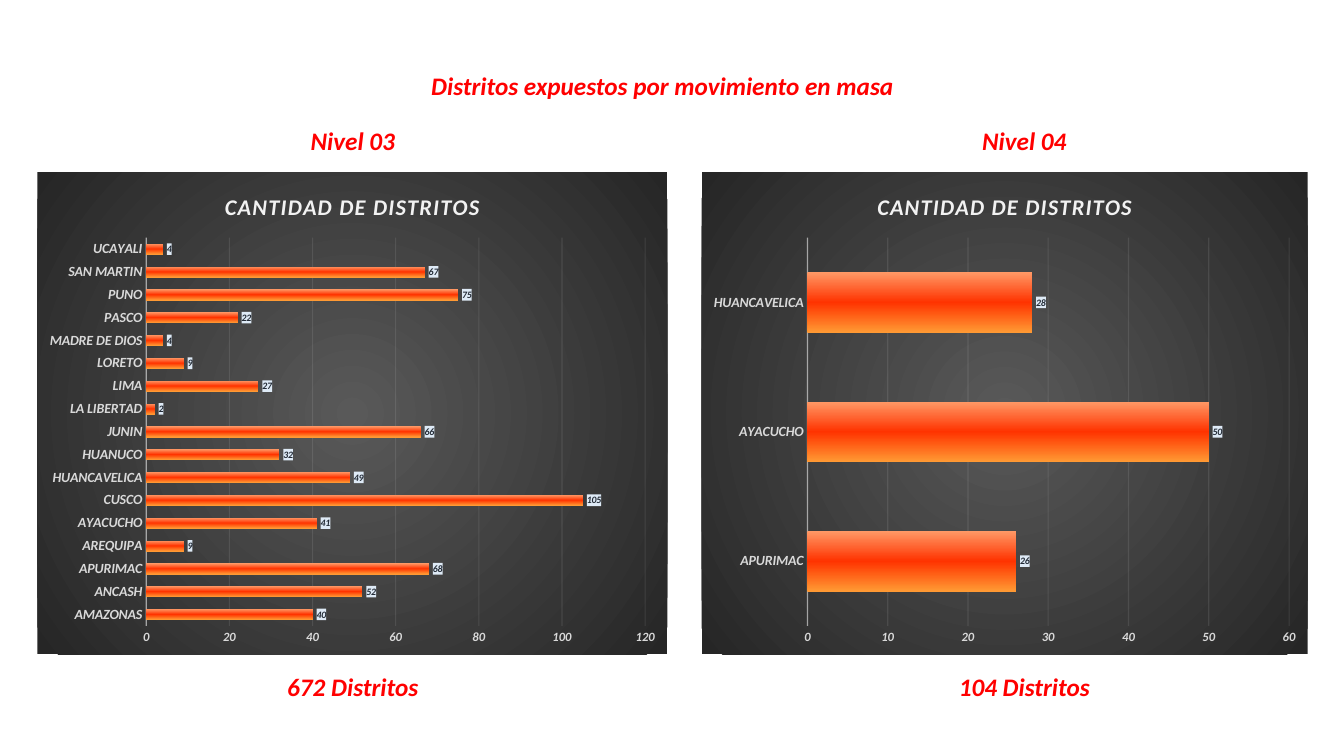
from dataclasses import dataclass

from lxml import etree
from pptx import Presentation
from pptx.chart.data import CategoryChartData
from pptx.dml.color import RGBColor
from pptx.enum.chart import XL_CHART_TYPE as ChartType, XL_LABEL_POSITION as LabelPosition
from pptx.enum.chart import XL_TICK_MARK as TickMark
from pptx.enum.text import MSO_ANCHOR as Anchor, MSO_AUTO_SIZE as AutoSize, PP_ALIGN as Align
from pptx.oxml import parse_xml
from pptx.oxml.ns import nsdecls, qn
from pptx.util import Inches, Pt


@dataclass(frozen=True)
class Theme:
    font: str = "Calibri"
    red: str = "FF0000"
    title: str = "F2F2F2"
    axis: str = "D9D9D9"
    label: str = "222A35"
    label_fill: str = "DEEAF6"
    backdrop: tuple = ((0, "595959"), (100, "262626"))
    bar: tuple = ((0, "FF9966"), (50, "FF3300"), (100, "FF9933"))
    heading_size: int = 18
    title_size: int = 16
    category_size: int = 10
    value_size: int = 9
    label_size: int = 7


theme = Theme()


def style(font, size, color):
    font.name, font.size = theme.font, Pt(size)
    font.bold = font.italic = True
    font.color.rgb = RGBColor.from_string(color)


def gradient(stops, direction):
    marks = "".join(
        f'<a:gs pos="{pos * 1000}"><a:srgbClr val="{color}"/></a:gs>' for pos, color in stops
    )
    return f'<a:gradFill rotWithShape="1"><a:gsLst>{marks}</a:gsLst>{direction}</a:gradFill>'


radial = (
    '<a:path path="circle"><a:fillToRect l="50000" t="50000" r="50000" b="50000"/></a:path>'
)
levels = [
    ("Nivel 03", "672 Distritos", 0.37, 6.25, 3.5, {
        "AMAZONAS": 40, "ANCASH": 52, "APURIMAC": 68, "AREQUIPA": 9, "AYACUCHO": 41,
        "CUSCO": 105, "HUANCAVELICA": 49, "HUANUCO": 32, "JUNIN": 66, "LA LIBERTAD": 2,
        "LIMA": 27, "LORETO": 9, "MADRE DE DIOS": 4, "PASCO": 22, "PUNO": 75,
        "SAN MARTIN": 67, "UCAYALI": 4,
    }),
    ("Nivel 04", "104 Distritos", 6.96, 6.01, 10.16, {
        "APURIMAC": 26, "AYACUCHO": 50, "HUANCAVELICA": 28,
    }),
]

deck = Presentation()
deck.slide_width, deck.slide_height = Inches(13.33), Inches(7.5)
slide = deck.slides.add_slide(deck.slide_layouts[5])

heading = slide.shapes.title
heading.left, heading.top = Inches(4.15), Inches(0.65)
heading.width, heading.height = Inches(4.84), Inches(0.4)
captions = [(heading, "Distritos expuestos por movimiento en masa")]

for level, total, left, width, center, districts in levels:
    for wording, top, span in ((level, 1.19, 1.06), (total, 6.61, 1.67)):
        caption = slide.shapes.add_textbox(
            Inches(center - span / 2), Inches(top), Inches(span), Inches(0.4)
        )
        captions.append((caption, wording))

    counts = CategoryChartData(number_format="#,##0")
    counts.categories = list(districts)
    counts.add_series("CANTIDAD DE DISTRITOS", list(districts.values()))
    chart = slide.shapes.add_chart(
        ChartType.BAR_CLUSTERED, Inches(left), Inches(1.71), Inches(width), Inches(4.78), counts
    ).chart
    chart.has_legend = False
    style(chart.font, theme.category_size, "000000")
    chart.element.find(qn("c:chart")).addnext(parse_xml(
        f'<c:spPr {nsdecls("c", "a")}>{gradient(theme.backdrop, radial)}'
        "<a:ln><a:noFill/></a:ln></c:spPr>"
    ))

    chart.has_title = True
    chart.chart_title.include_in_layout = False
    chart_title = chart.chart_title.text_frame
    chart_title.text = "CANTIDAD DE DISTRITOS"
    title_font = chart_title.paragraphs[0].runs[0].font
    style(title_font, theme.title_size, theme.title)
    title_font._element.set("spc", "100")

    category_axis, value_axis = chart.category_axis, chart.value_axis
    for axis, size in ((category_axis, theme.category_size), (value_axis, theme.value_size)):
        axis.major_tick_mark = axis.minor_tick_mark = TickMark.NONE
        style(axis.tick_labels.font, size, theme.axis)
    value_axis.minimum_scale = 0
    value_axis.tick_labels.number_format = "#,##0"
    value_axis.tick_labels.number_format_is_linked = False
    value_axis.format.line.fill.background()
    for line, weight, opacity in (
        (category_axis.format.line, 1, 54),
        (value_axis.major_gridlines.format.line, 0.75, 10),
    ):
        line.width = Pt(weight)
        line.color.rgb = RGBColor.from_string(theme.title)
        tint = next(line._get_or_add_ln().iter(qn("a:srgbClr")))
        etree.SubElement(tint, qn("a:alpha")).set("val", str(opacity * 1000))

    plot = chart.plots[0]
    plot.gap_width, plot.overlap = 115, -20
    plot.vary_by_categories = False
    bars = plot.series[0]
    bars.invert_if_negative = False
    bars.format.line.fill.background()
    bars._element.get_or_add_spPr().insert(0, parse_xml(
        gradient(theme.bar, '<a:lin ang="5400000" scaled="0"/>').replace(
            "<a:gradFill", f'<a:gradFill {nsdecls("a")}', 1
        )
    ))
    labels = bars.data_labels
    labels.show_value = True
    labels.position = LabelPosition.OUTSIDE_END
    labels.number_format, labels.number_format_is_linked = "#,##0", False
    style(labels.font, theme.label_size, theme.label)
    labels._element.find(qn("c:numFmt")).addnext(parse_xml(
        f'<c:spPr {nsdecls("c", "a")}><a:solidFill><a:srgbClr val="{theme.label_fill}"/>'
        "</a:solidFill></c:spPr>"
    ))

for caption, wording in captions:
    frame = caption.text_frame
    frame.text = wording
    frame.word_wrap = caption is not heading
    frame.auto_size = AutoSize.SHAPE_TO_FIT_TEXT
    frame.vertical_anchor = Anchor.TOP
    frame.paragraphs[0].alignment = Align.CENTER
    style(frame.paragraphs[0].runs[0].font, theme.heading_size, theme.red)

deck.save("out.pptx")
